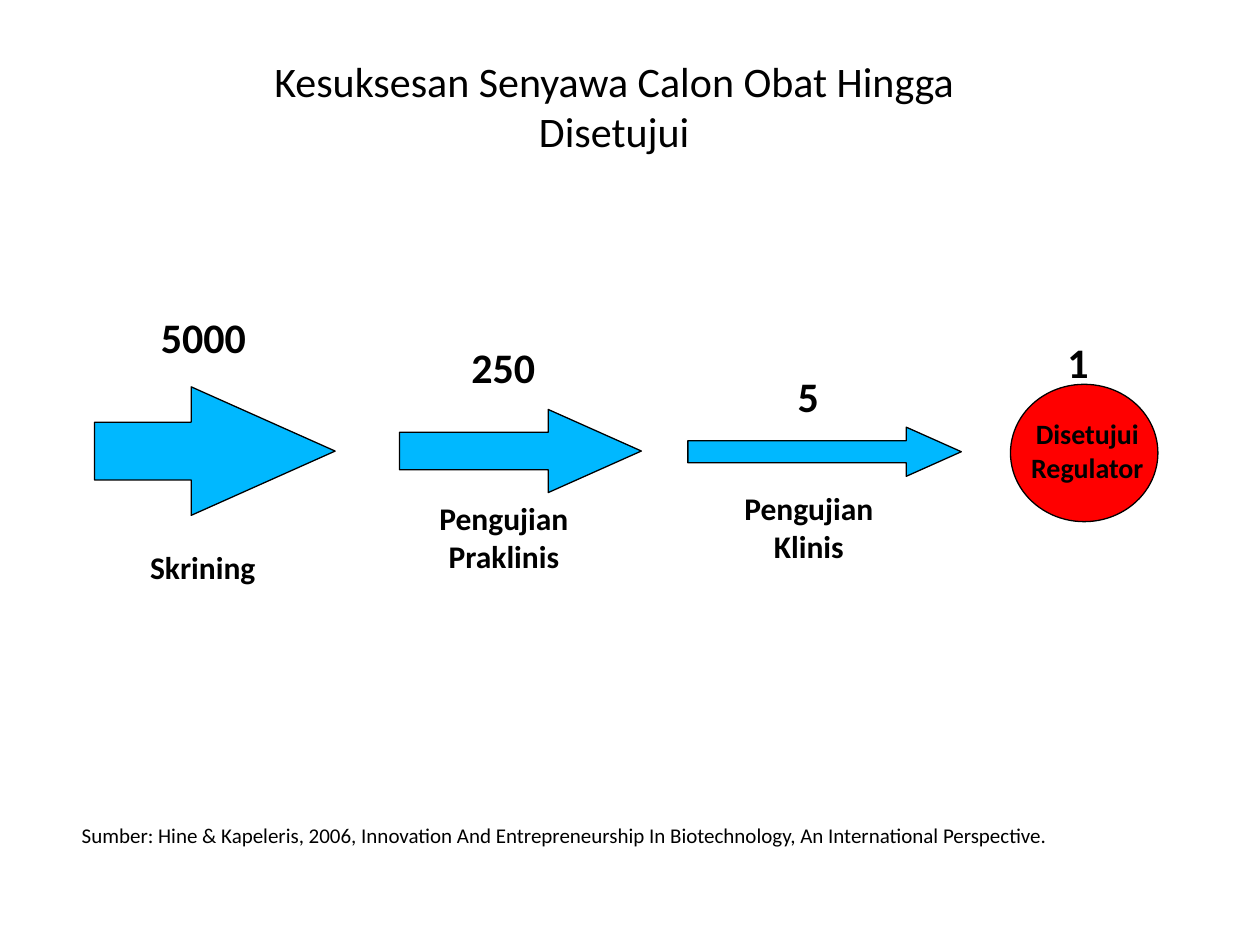
import pptx
import pptx.util
import pptx.dml.color
import pptx.enum.shapes
import pptx.enum.text
from pptx.util import Inches

SHAPES = pptx.enum.shapes.MSO_SHAPE
ALIGN = pptx.enum.text.PP_ALIGN
BLACK = "000000"
COUNT_FORMAT = {"size": pptx.util.Pt(24), "bold": True}
STAGE_FORMAT = {"size": pptx.util.Pt(18), "bold": True}
APPROVAL_FORMAT = {"size": pptx.util.Pt(16), "bold": True}
TITLE_FORMAT = {"size": pptx.util.Pt(24), "bold": False}
SOURCE_FORMAT = {"size": pptx.util.Pt(12), "bold": False}

ARROWS = [
    (0.75, 3.07, 1.91, 1.02),
    (3.17, 3.25, 1.92, 0.66),
    (5.46, 3.39, 2.17, 0.39),
]
COUNTS = [
    ("5000", 1.03, 2.42),
    ("250", 3.41, 2.66),
    ("5", 5.83, 2.89),
    ("1", 7.97, 2.62),
]
STAGES = [
    ("Skrining", 0.86, 4.3, 0.4),
    ("Pengujian Praklinis", 3.25, 3.91, 0.71),
    ("Pengujian Klinis", 5.67, 3.83, 0.71),
]


def color(value):
    return pptx.dml.color.RGBColor.from_string(value)


def add_outlined_shape(slide, kind, bounds, fill):
    shape = slide.shapes.add_shape(kind, *map(Inches, bounds))
    shape.shadow.inherit = False
    shape.fill.solid()
    shape.fill.fore_color.rgb = color(fill)
    shape.line.color.rgb = color(BLACK)
    shape.line.width = pptx.util.Pt(0.75)
    return shape


def add_arrow(slide, bounds):
    arrow = add_outlined_shape(slide, SHAPES.RIGHT_ARROW, bounds, "00B8FF")
    arrow.adjustments[0] = 0.45
    arrow.adjustments[1] = 1.12


def add_text(slide, text, bounds, font_format, alignment=ALIGN.CENTER):
    text_frame = slide.shapes.add_textbox(*map(Inches, bounds)).text_frame
    text_frame.word_wrap = True
    text_frame.auto_size = pptx.enum.text.MSO_AUTO_SIZE.SHAPE_TO_FIT_TEXT
    paragraph = text_frame.paragraphs[0]
    paragraph.alignment = alignment
    run = paragraph.add_run()
    run.text = text
    run.font.name = "Calibri"
    run.font.color.rgb = color(BLACK)
    for name, value in font_format.items():
        setattr(run.font, name, value)


def main():
    presentation = pptx.Presentation()
    presentation.slide_width = Inches(10)
    presentation.slide_height = Inches(7.5)
    slide = presentation.slides.add_slide(presentation.slide_layouts[6])

    add_outlined_shape(slide, SHAPES.OVAL, (8.02, 3.05, 1.17, 1.09), "FF0000")
    add_text(slide, "Kesuksesan Senyawa Calon Obat Hingga Disetujui",
             (1.56, 0.39, 6.63, 0.91), TITLE_FORMAT)
    add_text(slide, "Sumber: Hine & Kapeleris, 2006, Innovation And Entrepreneurship "
             "In Biotechnology, An International Perspective.",
             (0.55, 6.48, 8.92, 0.3), SOURCE_FORMAT, ALIGN.LEFT)
    for bounds in ARROWS:
        add_arrow(slide, bounds)
    for text, left, top in COUNTS:
        add_text(slide, text, (left, top, 1.17, 0.5), COUNT_FORMAT)
    for text, left, top, height in STAGES:
        add_text(slide, text, (left, top, 1.5, height), STAGE_FORMAT)
    add_text(slide, "Disetujui Regulator", (7.88, 3.26, 1.5, 0.64), APPROVAL_FORMAT)

    presentation.save("out.pptx")


if __name__ == "__main__":
    main()
